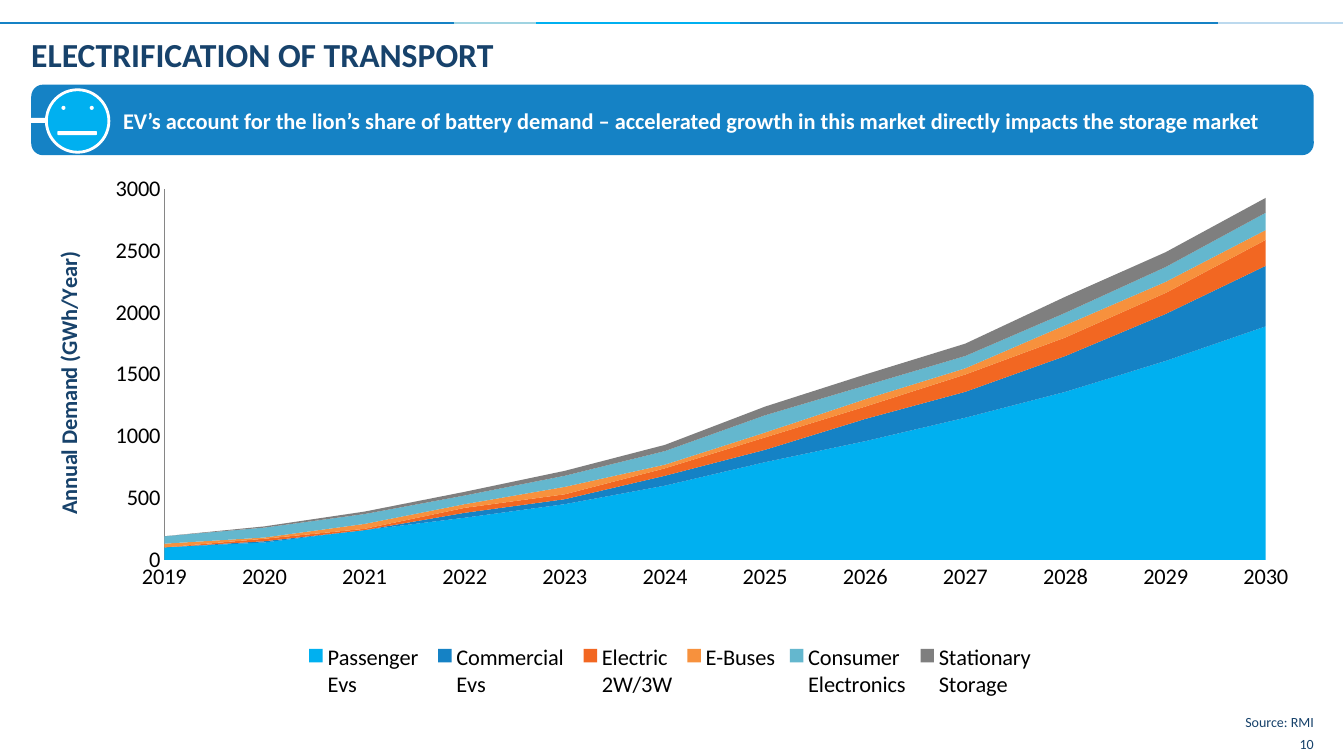
from lxml import etree
from pptx import Presentation
from pptx import util as u
from pptx.chart.data import CategoryChartData
from pptx.dml.color import RGBColor
from pptx.enum import chart as ch, shapes as sh, text as tx
from pptx.oxml import parse_xml
from pptx.oxml.ns import nsdecls, qn

# Content
FONT, NAVY, BLUE, SKY, WHITE = "Calibri", "17426B", "1582C5", "00B0F0", "FFFFFF"
TITLE = "ELECTRIFICATION OF TRANSPORT"
CLAIM = ("EV’s account for the lion’s share of battery demand – accelerated "
         "growth in this market directly impacts the storage market")
AXIS = "Annual Demand (GWh/Year)"
YEARS = [str(y) for y in range(2019, 2031)]
DEMAND = [
    ("Passenger \nEvs", SKY, [100, 140, 240, 340, 450, 600, 790, 960, 1150, 1360, 1610, 1890]),
    ("Commercial \nEvs", BLUE, [0, 10, 0, 40, 40, 80, 100, 180, 210, 290, 380, 490]),
    ("Electric \n2W/3W", "F26722", [0, 20, 10, 40, 40, 60, 100, 100, 140, 150, 170, 210]),
    ("E-Buses", "F7913D", [30, 10, 40, 30, 60, 30, 40, 60, 50, 100, 90, 80]),
    ("Consumer \nElectronics", "64B7CE", [60, 80, 80, 70, 90, 110, 140, 110, 100, 100, 120, 140]),
    ("Stationary \nStorage", "7F7F7F", [0, 10, 20, 30, 40, 50, 70, 90, 100, 130, 120, 120]),
]
RULES = [(12.01, 13.32, "BCD9EE"), (7.1, 12.08, BLUE), (0, 4.53, BLUE),
         (5.23, 7.34, SKY), (4.5, 5.32, "9FD3E1")]
PLOT = {"x": 0.1, "y": 0.041, "w": 0.867, "h": 0.691}
CASE = [(0.57, 1.1), (0.95, 1.1), (0.96, 1.11), (0.95, 1.14), (0.92, 1.15), (0.92, 1.28),
        (0.91, 1.29), (0.61, 1.29), (0.6, 1.28), (0.6, 1.15), (0.57, 1.14), (0.56, 1.12)]

WIDE, HIGH, EDGE = 13.33, 7.5, 0.31
BODY = WIDE - 2 * EDGE + 0.01

deck = Presentation()
deck.slide_width, deck.slide_height = u.Inches(WIDE), u.Inches(HIGH)
page = deck.slides.add_slide(deck.slide_layouts[6])


def rgb(code):
    return RGBColor.from_string(code)


def style(font, size, color, bold=False):
    font.name, font.size, font.bold = FONT, u.Pt(size), bold
    font.color.rgb = rgb(color)


def label(words, box, size, color, bold=False, right=False, anchor="MIDDLE"):
    frame = page.shapes.add_textbox(*map(u.Inches, box)).text_frame
    frame.margin_left = frame.margin_right = frame.margin_top = frame.margin_bottom = 0
    frame.word_wrap = True
    frame.vertical_anchor = tx.MSO_ANCHOR[anchor]
    frame.text = words
    para = frame.paragraphs[0]
    para.alignment = tx.PP_ALIGN.RIGHT if right else tx.PP_ALIGN.LEFT
    style(para.runs[0].font, size, color, bold)


def paint(item, fill, line=None):
    item.shadow.inherit = False
    item.fill.solid()
    item.fill.fore_color.rgb = rgb(fill)
    if line:
        item.line.color.rgb, item.line.width = rgb(line), u.Pt(2)
    else:
        item.line.fill.background()


def block(kind, box, fill, line=None):
    item = page.shapes.add_shape(sh.MSO_SHAPE[kind], *map(u.Inches, box))
    paint(item, fill, line)


# Top rule and title
for left, right, color in RULES:
    rule = page.shapes.add_connector(sh.MSO_CONNECTOR.STRAIGHT, u.Inches(left),
                                     u.Inches(0.23), u.Inches(right), u.Inches(0.23))
    rule.line.color.rgb, rule.line.width = rgb(color), u.Pt(1.5)
    etree.SubElement(rule._element.spPr, qn("a:effectLst"))
label(TITLE, (EDGE, 0.34, BODY, 0.4), 24, NAVY, bold=True, anchor="TOP")

# Stacked area chart
data = CategoryChartData()
data.categories = YEARS
for name, color, values in DEMAND:
    data.add_series(name, values)
chart = page.shapes.add_chart(ch.XL_CHART_TYPE.AREA_STACKED, u.Inches(0.37), u.Inches(1.66),
                              u.Inches(12.6), u.Inches(5.32), data).chart
style(chart.font, 16, "000000")
chart.has_title = False
chart.has_legend = True
chart.legend.position = ch.XL_LEGEND_POSITION.BOTTOM
chart.legend.include_in_layout = False
chart.plots[0].vary_by_categories = False
for series, (name, color, values) in zip(chart.plots[0].series, DEMAND):
    series.format.fill.solid()
    series.format.fill.fore_color.rgb = rgb(color)

years, demand = chart.category_axis, chart.value_axis
for axis in (years, demand):
    axis.has_major_gridlines = False
    axis.major_tick_mark = axis.minor_tick_mark = ch.XL_TICK_MARK.NONE
years.format.line.fill.background()
demand.format.line.color.rgb = rgb("868686")
demand.minimum_scale, demand.maximum_scale, demand.major_unit = 0, 3000, 500
demand.tick_labels.number_format = "General"
demand.tick_labels.number_format_is_linked = False
demand.has_title = True
demand.axis_title.text_frame.text = AXIS
style(demand.axis_title.text_frame.paragraphs[0].runs[0].font, 16, NAVY, True)
demand._element.find(qn("c:crossBetween")).set("val", "midCat")

# Fixed inner plot area
area = chart._chartSpace.chart.plotArea
for old in area.findall(qn("c:layout")):
    area.remove(old)
modes = '<c:layoutTarget val="inner"/><c:xMode val="edge"/><c:yMode val="edge"/>'
sides = "".join(f'<c:{key} val="{val}"/>' for key, val in PLOT.items())
area.insert(0, parse_xml(f'<c:layout {nsdecls("c")}><c:manualLayout>{modes}{sides}'
                         '</c:manualLayout></c:layout>'))

# Banner
block("ROUNDED_RECTANGLE", (EDGE, 0.84, BODY, 0.7), BLUE)
label(CLAIM, (1.22, 1.06, 11.65, 0.27), 16, WHITE, bold=True)
block("OVAL", (0.46, 0.89, 0.62, 0.62), SKY, WHITE)
block("RECTANGLE", (EDGE, 1.17, 0.15, 0.05), WHITE)

# Battery icon
pen = page.shapes.build_freeform(*CASE[0], scale=u.Inches(1))
pen.add_line_segments(CASE[1:], close=True)
paint(pen.convert_to_shape(), WHITE)
block("CROSS", (0.63, 1.13, 0.06, 0.06), SKY)
block("RECTANGLE", (0.83, 1.15, 0.06, 0.01), SKY)
block("ROUNDED_RECTANGLE", (0.57, 1.3, 0.39, 0.04), WHITE)
for left in (0.61, 0.89):
    block("OVAL", (left, 1.05, 0.04, 0.04), WHITE)

# Footer
label("Source: RMI", (12.34, 7.08, 0.69, 0.17), 10, NAVY, right=True, anchor="BOTTOM")
label("10", (12.87, 7.3, 0.16, 0.17), 10, NAVY, right=True)

deck.save("out.pptx")
